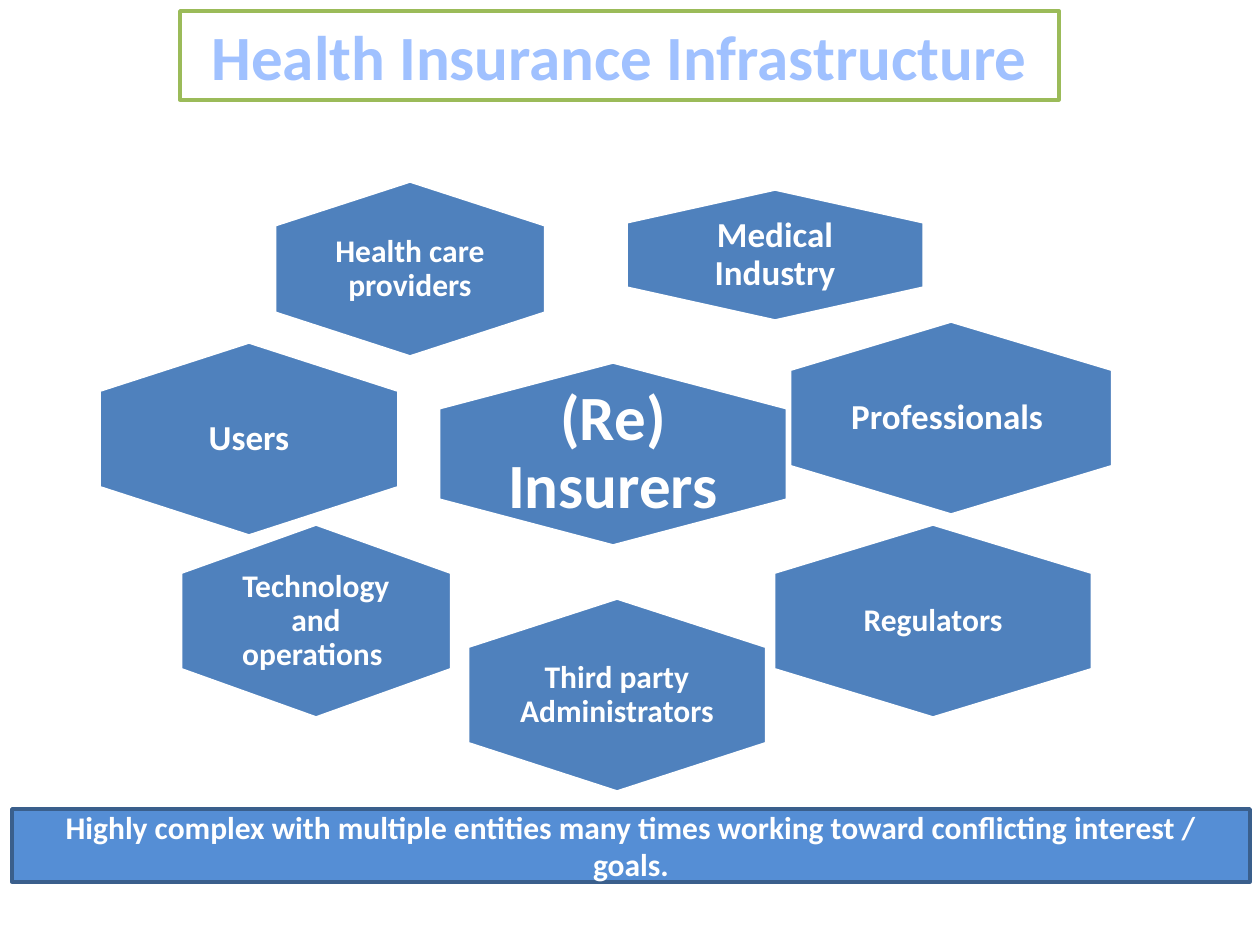
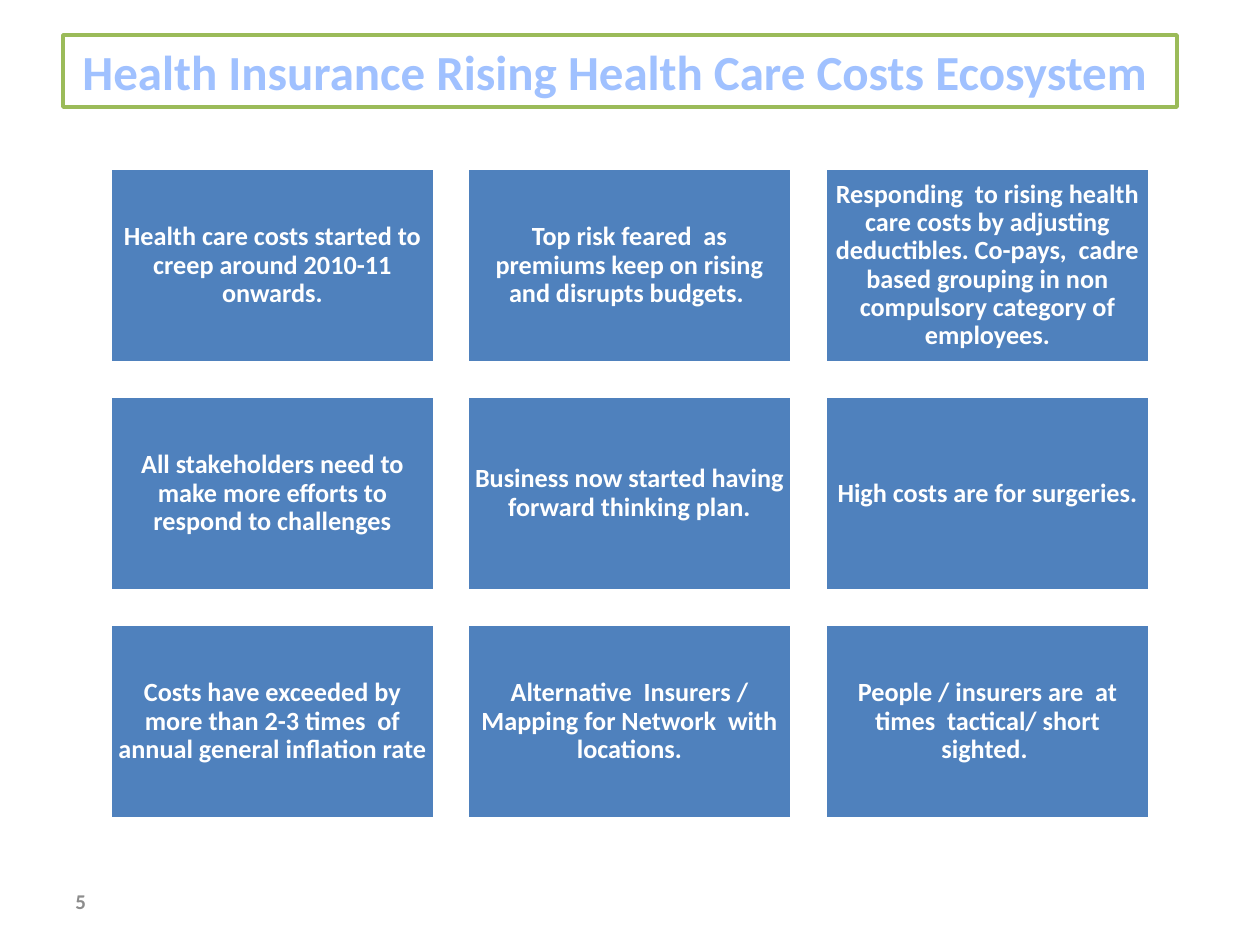
from pptx import Presentation
from pptx.dml.color import RGBColor
from pptx.enum.shapes import MSO_SHAPE as SHAPE
from pptx.enum.text import MSO_ANCHOR as ANCHOR, PP_ALIGN as ALIGN
from pptx.oxml import parse_xml
from pptx.util import Emu, Pt

BLUE, WHITE, GREEN = "4F81BD", "FFFFFF", "9BBB59"
BAR_FILL, BAR_LINE, GREY = "558ED5", "3A5F8C", "8C8C8C"
FONT = "Calibri"
PX = 914400 / 126
NS = "http://schemas.openxmlformats.org/drawingml/2006/main"

# Title lettering: thin outline and a vertical gradient
TITLE_STOPS = [(0, "BFD3F9"), (9, "A0C1FF"), (50, "003D85"), (79, "A0C1FF"), (100, "BFD3F9")]
stops = "".join(f'<a:gs pos="{pos * 1000}"><a:srgbClr val="{c}"/></a:gs>' for pos, c in TITLE_STOPS)
TITLE_LINE = (f'<a:ln xmlns:a="{NS}" w="10541"><a:solidFill><a:srgbClr val="467AB8"/>'
              '</a:solidFill></a:ln>')
TITLE_FILL = (f'<a:gradFill xmlns:a="{NS}"><a:gsLst>{stops}</a:gsLst>'
              '<a:lin ang="5400000"/></a:gradFill>')


def add_box(s, kind, box, fill, line):
    sp = s.shapes.add_shape(kind, *[Emu(round(n * PX)) for n in box])
    sp.shadow.inherit = False
    sp.fill.solid()
    sp.fill.fore_color.rgb = RGBColor.from_string(fill)
    sp.line.color.rgb = RGBColor.from_string(line)
    sp.line.width = Pt(2)
    return sp


def write(sp, text, size, color=WHITE, inset=None, spacing=None, align=ALIGN.CENTER):
    tf = sp.text_frame
    tf.word_wrap = True
    tf.vertical_anchor = ANCHOR.MIDDLE
    if inset is not None:
        tf.margin_left = tf.margin_right = Emu(round(inset * PX))
        tf.margin_top = tf.margin_bottom = tf.margin_left
    tf.text = text
    p = tf.paragraphs[0]
    p.alignment = align
    p.line_spacing = spacing
    f = p.runs[0].font
    f.name, f.size, f.bold = FONT, Pt(size), True
    f.color.rgb = RGBColor.from_string(color)


prs = Presentation()
prs.slide_width, prs.slide_height = Emu(round(1260 * PX)), Emu(round(945 * PX))
blank = prs.slide_layouts[6]

# Both slides with their framed titles
titles = [
    ("Health Insurance Infrastructure", 36, (180, 11, 879, 89)),
    ("Health Insurance Rising Health Care Costs Ecosystem ", 28, (63, 35, 1114, 72)),
]
for text, size, box in titles:
    s = prs.slides.add_slide(blank)
    sp = add_box(s, SHAPE.RECTANGLE, box, WHITE, GREEN)
    write(sp, text, size)
    sp.text_frame.word_wrap = False
    rPr = sp.text_frame.paragraphs[0].runs[0].font._element
    rPr.remove(rPr.find(f"{{{NS}}}solidFill"))
    rPr.insert(0, parse_xml(TITLE_LINE))
    rPr.insert(1, parse_xml(TITLE_FILL))
infrastructure, costs = prs.slides

# Slide 1: hexagons by centre, visible width and height, text size
hexagons = [
    ("Medical Industry", 775, 255, 298, 132, 20),
    ("Health care providers", 410, 269, 271, 176, 18),
    ("Users", 249, 439, 300, 194, 20),
    ("Professionals ", 951, 418, 323, 194, 20),
    ("Regulators", 933, 621, 319, 194, 18),
    ("(Re) Insurers", 613, 454, 349, 184, 36),
    ("Technology and operations ", 316, 621, 271, 194, 18),
    ("Third party Administrators", 617, 695, 299, 194, 18),
]
for text, cx, cy, w, h, size in hexagons:
    # The hexagon stands on its point, so its frame is turned
    sp = add_box(infrastructure, SHAPE.HEXAGON, (cx - h / 2, cy - w / 2, h, w), BLUE, WHITE)
    sp.rotation = 90
    # Upright label over the middle two thirds
    label = (cx - w / 3, cy - h / 3, w * 2 / 3, h * 2 / 3)
    tb = infrastructure.shapes.add_textbox(*[Emu(round(n * PX)) for n in label])
    write(tb, text, size, inset=0, spacing=0.9)

# Slide 1: conclusion bar
sp = add_box(infrastructure, SHAPE.RECTANGLE, (12, 809, 1238, 73), BAR_FILL, BAR_LINE)
write(sp, "Highly complex with multiple entities many times working toward "
          "conflicting interest / goals.", 18)
sp.text_frame.margin_left = sp.text_frame.margin_right = Emu(round(16 * PX))

# Slide 2: three by three grid of statements
statements = [
    "Health care costs started to creep around 2010-11 onwards.",
    "Top risk feared  as premiums keep on rising and disrupts budgets. ",
    "Responding  to rising health care costs by adjusting deductibles. Co-pays,  cadre "
    "based grouping in non compulsory category of employees.",
    "All stakeholders need to make more efforts to respond to challenges",
    "Business now started having forward thinking plan.",
    "High costs are for surgeries.",
    "Costs have exceeded by more than 2-3 times  of annual general inflation rate",
    "Alternative  Insurers / Mapping for Network  with locations.",
    "People / insurers are  at times  tactical/ short sighted. ",
]
for i, text in enumerate(statements):
    row, col = divmod(i, 3)
    box = (110 + 715 * col // 2, 168 + 228 * row, 325, 195)
    sp = add_box(costs, SHAPE.RECTANGLE, box, BLUE, WHITE)
    write(sp, text, 15, inset=7, spacing=0.9)

# Slide 2: page number
tb = costs.shapes.add_textbox(*[Emu(round(n * PX)) for n in (63, 876, 294, 50)])
write(tb, "5", 12, color=GREY, align=ALIGN.LEFT)

prs.save("out.pptx")
